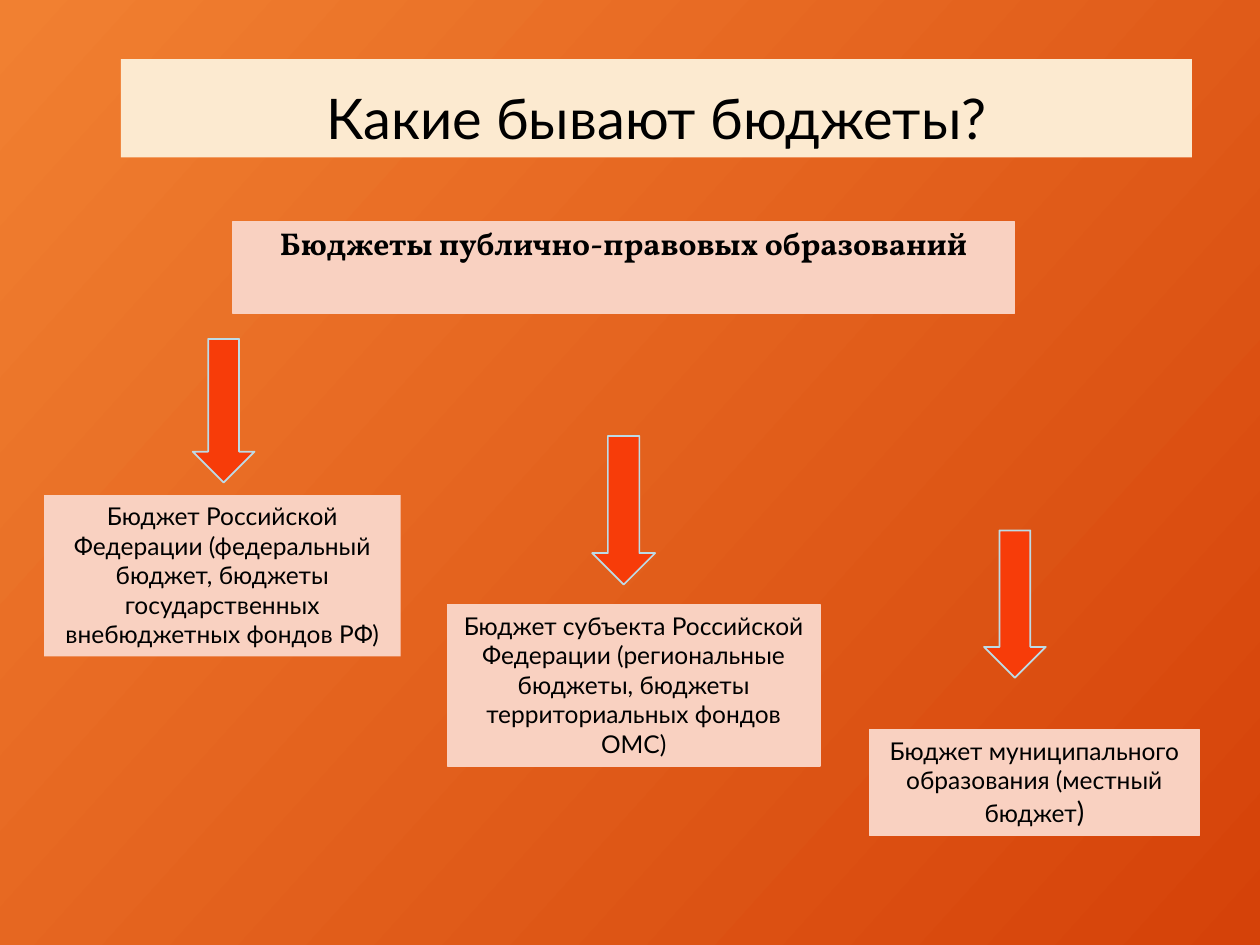
"""Build a slide on the kinds of public budgets."""
from dataclasses import dataclass
from typing import Optional

import pptx
import pptx.dml.color
import pptx.enum.shapes
import pptx.enum.text
import pptx.util
from pptx.util import Inches


@dataclass(frozen=True)
class Theme:
    backdrop: tuple[str, str] = ("F18031", "D54209")
    backdrop_angle: float = 318
    heading: str = "FCEAD0"
    panel: str = "F9D1C1"
    arrow: str = "F73C09"
    arrow_edge: str = "BDDBE6"
    ink: str = "000000"
    body_font: str = "Lato"
    accent_font: str = "Vollkorn"
    title_size: int = 32
    subtitle_size: int = 18
    body_size: int = 14
    bracket_size: int = 16


@dataclass(frozen=True)
class Area:
    left: float
    top: float
    width: float
    height: float

    def lengths(self) -> tuple:
        return tuple(map(Inches, (self.left, self.top, self.width, self.height)))


@dataclass(frozen=True)
class Budget:
    arrow: Area
    panel: Area
    lines: tuple[str, ...]
    outlined: bool = True
    bracket: str = ""


THEME = Theme()
TITLE_AREA = Area(0.96, 0.47, 8.5, 0.78)
SUBTITLE_AREA = Area(1.85, 1.76, 6.2, 0.73)
BUDGETS = (
    Budget(
        Area(1.53, 2.69, 0.49, 1.14),
        Area(0.35, 3.93, 2.83, 1.28),
        ("Бюджет Российской Федерации (федеральный бюджет, бюджеты "
         "государственных внебюджетных фондов РФ)",),
        outlined=False,
    ),
    Budget(
        Area(4.7, 3.46, 0.5, 1.18),
        Area(3.55, 4.8, 2.96, 1.28),
        ("Бюджет субъекта Российской Федерации (региональные бюджеты, "
         "бюджеты территориальных фондов ОМС)",),
    ),
    Budget(
        Area(7.81, 4.21, 0.49, 1.17),
        Area(6.9, 5.79, 2.62, 0.84),
        ("Бюджет муниципального", "образования (местный бюджет"),
        bracket=")",
    ),
)


def rgb(value: str) -> pptx.dml.color.RGBColor:
    return pptx.dml.color.RGBColor.from_string(value)


def paint(shape, fill: str, edge: Optional[str] = None, weight: float = 0.75) -> None:
    shape.fill.solid()
    shape.fill.fore_color.rgb = rgb(fill)
    if edge:
        shape.line.color.rgb = rgb(edge)
        shape.line.width = pptx.util.Pt(weight)


def write(paragraph, text: str, *, size: int = THEME.body_size,
          font: str = THEME.body_font, bold: bool = False,
          spacing: Optional[float] = None) -> None:
    paragraph.alignment = pptx.enum.text.PP_ALIGN.CENTER
    if spacing:
        paragraph.line_spacing = spacing
    run = paragraph.add_run()
    run.text = text
    run.font.size = pptx.util.Pt(size)
    run.font.name = font
    run.font.bold = bold
    run.font.color.rgb = rgb(THEME.ink)


def add_panel(slide, area: Area, outlined: bool = True):
    panel = slide.shapes.add_textbox(*area.lengths())
    paint(panel, THEME.panel, THEME.panel if outlined else None)
    panel.text_frame.word_wrap = True
    return panel.text_frame


def add_title(slide) -> None:
    title = slide.shapes.title
    title.left, title.top, title.width, title.height = TITLE_AREA.lengths()
    paint(title, THEME.heading)
    frame = title.text_frame
    frame.auto_size = pptx.enum.text.MSO_AUTO_SIZE.NONE
    frame.vertical_anchor = pptx.enum.text.MSO_ANCHOR.BOTTOM
    write(frame.paragraphs[0], "Какие бывают бюджеты?",
          size=THEME.title_size, spacing=0.9)


def add_budget(slide, budget: Budget) -> None:
    arrow = slide.shapes.add_shape(
        pptx.enum.shapes.MSO_SHAPE.DOWN_ARROW, *budget.arrow.lengths())
    arrow.shadow.inherit = False
    paint(arrow, THEME.arrow, THEME.arrow_edge, weight=1)
    frame = add_panel(slide, budget.panel, budget.outlined)
    frame.auto_size = pptx.enum.text.MSO_AUTO_SIZE.SHAPE_TO_FIT_TEXT
    for index, line in enumerate(budget.lines):
        paragraph = frame.add_paragraph() if index else frame.paragraphs[0]
        write(paragraph, line)
    if budget.bracket:
        write(paragraph, budget.bracket, size=THEME.bracket_size)


def main() -> None:
    deck = pptx.Presentation()
    deck.slide_width, deck.slide_height = Inches(10), Inches(7.5)
    slide = deck.slides.add_slide(deck.slide_layouts[5])
    backdrop = slide.background.fill
    backdrop.gradient()
    backdrop.gradient_angle = THEME.backdrop_angle
    for stop, color in zip(backdrop.gradient_stops, THEME.backdrop):
        stop.color.rgb = rgb(color)
    add_title(slide)
    subtitle = add_panel(slide, SUBTITLE_AREA)
    write(subtitle.paragraphs[0], "Бюджеты публично-правовых образований",
          size=THEME.subtitle_size, font=THEME.accent_font, bold=True, spacing=0.9)
    for budget in BUDGETS:
        add_budget(slide, budget)
    deck.save("out.pptx")


if __name__ == "__main__":
    main()
